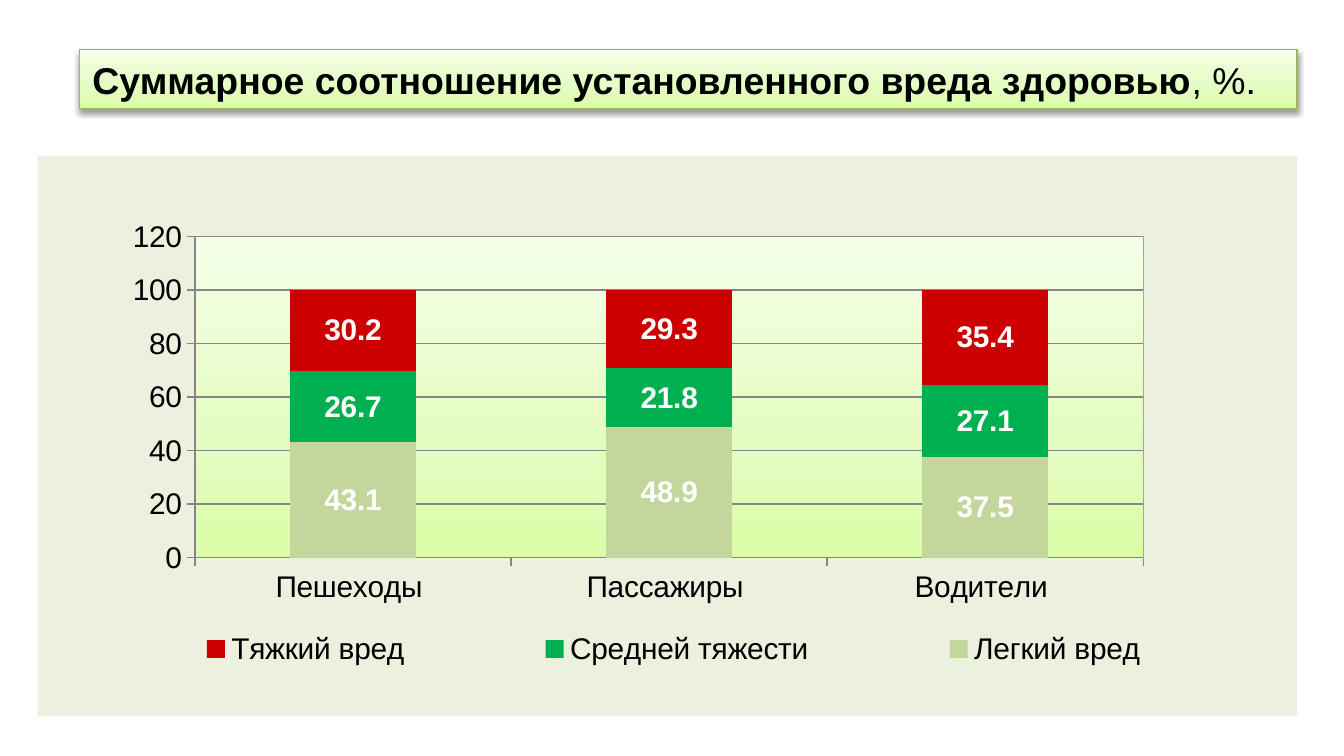
from pptx import Presentation
from pptx.chart.data import CategoryChartData
from pptx.dml.color import RGBColor
from pptx.enum.chart import XL_CHART_TYPE, XL_LEGEND_POSITION, XL_TICK_MARK
from pptx.enum.shapes import MSO_SHAPE
from pptx.enum.text import MSO_ANCHOR, PP_ALIGN
from pptx.oxml import parse_xml
from pptx.oxml.ns import nsdecls, qn
from pptx.util import Inches, Pt

STACKED = XL_CHART_TYPE.COLUMN_STACKED
RIGHT = XL_LEGEND_POSITION.RIGHT
OUT, NONE = XL_TICK_MARK.OUTSIDE, XL_TICK_MARK.NONE
RECT = MSO_SHAPE.RECTANGLE
MIDDLE, LEFT = MSO_ANCHOR.MIDDLE, PP_ALIGN.LEFT

BLACK = RGBColor(0x00, 0x00, 0x00)
WHITE = RGBColor(0xFF, 0xFF, 0xFF)
GRAY = RGBColor(0x86, 0x86, 0x86)
EDGE = RGBColor(0x98, 0xB9, 0x55)
PANEL = RGBColor(0xEB, 0xF1, 0xDE)
OLIVE = RGBColor(0xC3, 0xD6, 0x9B)
GREEN = RGBColor(0x00, 0xB0, 0x50)
RED = RGBColor(0xCC, 0x00, 0x00)
LIMES = (
    (0, RGBColor(0xDA, 0xFD, 0xA7)),
    (35, RGBColor(0xE4, 0xFC, 0xC2)),
    (100, RGBColor(0xF5, 0xFF, 0xE7)),
)

FONT = "Arial"
WIDE = Inches(10)
HIGH = WIDE * 9 // 16
GROUPS = ("Пешеходы ", "Пассажиры ", "Водители ")
HARMS = (
    ("Легкий вред", (43.1, 48.9, 37.5), OLIVE),
    ("Средней тяжести", (26.7, 21.8, 27.1), GREEN),
    ("Тяжкий вред", (30.2, 29.3, 35.4), RED),
)


def place(left, top, width, height):
    """Turn inches into a box."""
    return [Inches(size) for size in (left, top, width, height)]


def fade():
    """Lime gradient, darkest at the bottom."""
    stops = "".join(
        f'<a:gs pos="{pos * 1000}"><a:srgbClr val="{color}"/></a:gs>'
        for pos, color in LIMES
    )
    return (f'<a:gradFill {nsdecls("a")} rotWithShape="1"><a:gsLst>{stops}</a:gsLst>'
            '<a:lin ang="16200000" scaled="0"/></a:gradFill>')


def outline(color):
    return f'<a:ln w="9525"><a:solidFill><a:srgbClr val="{color}"/></a:solidFill></a:ln>'


def paint(fill, line):
    """Chart part format."""
    return parse_xml(f'<c:spPr {nsdecls("c", "a")}>{fill}{line}</c:spPr>')


def layout(x, y, w, h, inner=False):
    """Fixed place of a chart part, in shares of the chart."""
    target = '<c:layoutTarget val="inner"/>' if inner else ""
    sizes = "".join(f'<c:{key} val="{val}"/>'
                    for key, val in (("x", x), ("y", y), ("w", w), ("h", h)))
    return parse_xml(
        f'<c:layout {nsdecls("c")}><c:manualLayout>{target}<c:xMode val="edge"/>'
        f'<c:yMode val="edge"/>{sizes}</c:manualLayout></c:layout>')


def fix(part, spot, box):
    """Swap in a fixed layout at the given child index."""
    for old in part.findall(qn("c:layout")):
        part.remove(old)
    part.insert(spot, box)


def add_run(para, text, bold):
    run = para.add_run()
    run.text = text
    font = run.font
    font.name, font.size, font.bold = FONT, Pt(20), bold
    font.color.rgb = BLACK


def add_title(slide, box):
    bar = slide.shapes.add_shape(RECT, *box)
    bar.line.color.rgb = EDGE
    bar.line.width = Pt(0.75)
    bar.shadow.inherit = False
    props = bar._element.spPr
    props.find(qn("a:prstGeom")).addnext(parse_xml(fade()))
    props.find(qn("a:effectLst")).append(parse_xml(
        f'<a:outerShdw {nsdecls("a")} blurRad="40000" dist="20000" dir="5400000" '
        'rotWithShape="0"><a:srgbClr val="000000"><a:alpha val="38000"/>'
        '</a:srgbClr></a:outerShdw>'))
    frame = bar.text_frame
    frame.word_wrap = True
    frame.vertical_anchor = MIDDLE
    para = frame.paragraphs[0]
    para.alignment = LEFT
    add_run(para, "Суммарное соотношение установленного вреда здоровью", True)
    add_run(para, ", %.", False)


def style_axis(axis):
    axis.major_tick_mark, axis.minor_tick_mark = OUT, NONE
    axis.format.line.color.rgb = GRAY


def add_bars(slide, box):
    data = CategoryChartData()
    data.categories = GROUPS
    for name, vals, _ in HARMS:
        data.add_series(name, vals)
    chart = slide.shapes.add_chart(STACKED, *box, data).chart
    chart.has_title = False
    chart.font.name, chart.font.size = FONT, Pt(16)
    chart.font.color.rgb = BLACK

    # Series and labels
    plot = chart.plots[0]
    plot.gap_width, plot.overlap = 150, 100
    plot.vary_by_categories = False
    for series, (_, _, color) in zip(plot.series, HARMS):
        series.format.fill.solid()
        series.format.fill.fore_color.rgb = color
        labels = series.data_labels
        labels.show_value = True
        labels.font.name, labels.font.size = FONT, Pt(16)
        labels.font.bold = True
        labels.font.color.rgb = WHITE

    # Axes
    style_axis(chart.category_axis)
    values = chart.value_axis
    style_axis(values)
    values.minimum_scale, values.maximum_scale, values.major_unit = 0, 120, 20
    values.has_major_gridlines = True
    values.major_gridlines.format.line.color.rgb = GRAY

    # Legend
    chart.has_legend = True
    chart.legend.position = RIGHT
    chart.legend.include_in_layout = False
    fix(chart.legend._element, 1, layout(0.03, 0.83, 0.95, 0.1))

    # Backgrounds
    root = chart._chartSpace.find(qn("c:chart"))
    area = root.find(qn("c:plotArea"))
    fix(area, 0, layout(0.125, 0.144, 0.753, 0.573, inner=True))
    area.append(paint(fade(), outline(EDGE)))
    solid = f'<a:solidFill><a:srgbClr val="{PANEL}"/></a:solidFill>'
    root.addnext(paint(solid, "<a:ln><a:noFill/></a:ln>"))


def main():
    deck = Presentation()
    deck.slide_width, deck.slide_height = WIDE, HIGH
    slide = deck.slides.add_slide(deck.slide_layouts[6])
    add_bars(slide, place(0.28, 1.16, 9.37, 4.17))
    add_title(slide, place(0.59, 0.37, 9.06, 0.44))
    deck.save("out.pptx")


if __name__ == "__main__":
    main()
